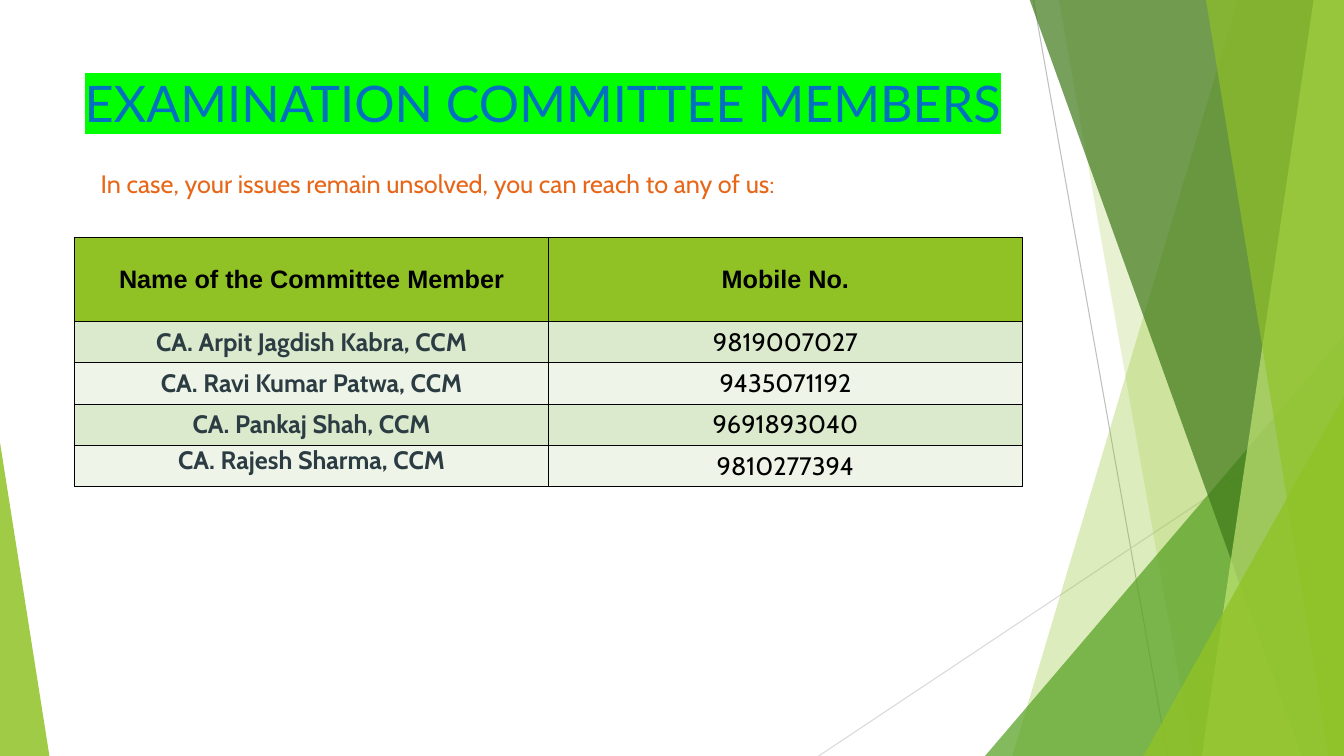
from lxml import etree
from pptx import Presentation
from pptx.dml.color import RGBColor
from pptx.enum.shapes import MSO_CONNECTOR as Conn, MSO_SHAPE as Shape
from pptx.enum.text import MSO_ANCHOR as Anchor, PP_ALIGN as Align
from pptx.oxml.ns import qn
from pptx.util import Inches, Pt

WIDE, HIGH = 13.33, 7.5
LIME, INK, SLATE = "90C226", "000000", "2C3C43"
MEMBERS = [
    ("CA. Arpit Jagdish Kabra, CCM", "9819007027"),
    ("CA. Ravi Kumar Patwa, CCM", "9435071192"),
    ("CA. Pankaj Shah, CCM", "9691893040"),
    ("CA. Rajesh Sharma, CCM", "9810277394"),
]


def rgb(code):
    return RGBColor.from_string(code)


class Deck:
    def __init__(self):
        self.show = Presentation()
        self.show.slide_width = Inches(WIDE)
        self.show.slide_height = Inches(HIGH)
        self.slide = self.show.slides.add_slide(self.show.slide_layouts[6])
        self.shapes = self.slide.shapes

    def paint(self, shape, color, alpha):
        """Fill a shape with a colour at alpha percent opacity, no outline."""
        shape.shadow.inherit = False
        shape.line.fill.background()
        shape.fill.solid()
        shape.fill.fore_color.rgb = rgb(color)
        tint = shape.fill._xPr.find(".//" + qn("a:srgbClr"))
        etree.SubElement(tint, qn("a:alpha"), val=str(alpha * 1000))

    def line(self, x1, y1, x2, y2, color):
        line = self.shapes.add_connector(
            Conn.STRAIGHT, Inches(x1), Inches(y1), Inches(x2), Inches(y2))
        line.line.color.rgb = rgb(color)
        line.line.width = Pt(0.75)
        etree.SubElement(line._element.spPr, qn("a:effectLst"))

    def band(self, top, foot, color, alpha):
        """Fill the area from a slanted left edge to the slide's right edge."""
        pen = self.shapes.build_freeform(Inches(top), Inches(-0.01))
        pen.add_line_segments([(Inches(x), Inches(y)) for x, y in (
            (WIDE, -0.01), (WIDE, HIGH), (foot, HIGH))])
        self.paint(pen.convert_to_shape(), color, alpha)

    def wedge(self, x, y, width, tip, color, alpha):
        """Draw a triangle standing on the slide's bottom edge."""
        shape = self.shapes.add_shape(
            Shape.ISOSCELES_TRIANGLE, Inches(x), Inches(y),
            Inches(width), Inches(HIGH - y))
        shape.adjustments[0] = tip
        self.paint(shape, color, alpha)

    def style(self, para, size, face, color, bold=False):
        font = para.font
        font.size, font.name, font.bold = Pt(size), face, bold
        font.color.rgb = rgb(color)

    def text(self, x, y, width, height, words, size, face, color, mark=None):
        box = self.shapes.add_textbox(
            Inches(x), Inches(y), Inches(width), Inches(height))
        box.text_frame.word_wrap = True
        para = box.text_frame.paragraphs[0]
        run = para.add_run()
        run.text = words
        self.style(para, size, face, color)
        if mark:
            light = etree.SubElement(run.font._element, qn("a:highlight"))
            etree.SubElement(light, qn("a:srgbClr"), val=mark)

    def cell(self, cell, words, fill, face, color, bold):
        cell.text = words
        cell.vertical_anchor = Anchor.MIDDLE
        cell.margin_left = cell.margin_right = Inches(0.08)
        cell.margin_top = cell.margin_bottom = 0
        para = cell.text_frame.paragraphs[0]
        para.alignment = Align.CENTER
        self.style(para, 18, face, color, bold)
        props = cell._tc.get_or_add_tcPr()
        for side in ("lnL", "lnR", "lnT", "lnB"):
            edge = etree.SubElement(props, qn("a:" + side), w=str(Pt(1)))
            solid = etree.SubElement(edge, qn("a:solidFill"))
            etree.SubElement(solid, qn("a:srgbClr"), val=INK)
        cell.fill.solid()
        cell.fill.fore_color.rgb = rgb(fill)

    def table(self, x, y, width, heads, rows, tall, low):
        """Draw a header row, then banded rows of a bold name and a number."""
        frame = self.shapes.add_table(
            len(rows) + 1, len(heads), Inches(x), Inches(y),
            Inches(width), Inches(tall + low * len(rows)))
        grid = frame.table
        grid.first_row = grid.horz_banding = False
        for row in grid.rows:
            row.height = Inches(low)
        grid.rows[0].height = Inches(tall)
        for col, head in enumerate(heads):
            self.cell(grid.cell(0, col), head, LIME, "Arial", INK, True)
        for at, (name, phone) in enumerate(rows, 1):
            fill = "DBE9CD" if at % 2 else "EEF4E8"
            self.cell(grid.cell(at, 0), name, fill, "Cabin", SLATE, True)
            self.cell(grid.cell(at, 1), phone, fill, "Cabin", INK, False)
        return grid


def main():
    deck = Deck()
    deck.line(10.25, 0, 11.58, HIGH, "BFBFBF")
    deck.line(WIDE, 4.03, 8.12, HIGH, "D9D9D9")
    deck.band(12.28, 10.04, LIME, 30)
    deck.band(10.5, 11.83, LIME, 20)
    deck.wedge(9.77, 3.33, 3.56, 1, "54A021", 72)
    deck.band(10.21, 12.91, "3F7819", 70)
    deck.band(13.03, 11.92, "C0E474", 70)
    deck.band(11.96, 13.18, LIME, 65)
    deck.wedge(11.34, 3.93, 1.99, 1, LIME, 80)
    deck.wedge(0, 4.39, 0.49, 0, LIME, 85)

    deck.text(0.74, 0.67, 9.4, 0.75, "EXAMINATION COMMITTEE MEMBERS",
              36, "Lato", "0070C0", mark="00FF00")
    grid = deck.table(0.74, 2.36, 9.4,
                      ("Name of the Committee Member", "Mobile No."),
                      MEMBERS, 0.83, 0.41)
    grid.cell(len(MEMBERS), 0).vertical_anchor = Anchor.TOP
    deck.text(0.9, 1.62, 9.11, 0.4,
              "In case, your issues remain unsolved, "
              "you can reach to any of us:", 18, "Cabin", "E76618")
    deck.show.save("out.pptx")


if __name__ == "__main__":
    main()
